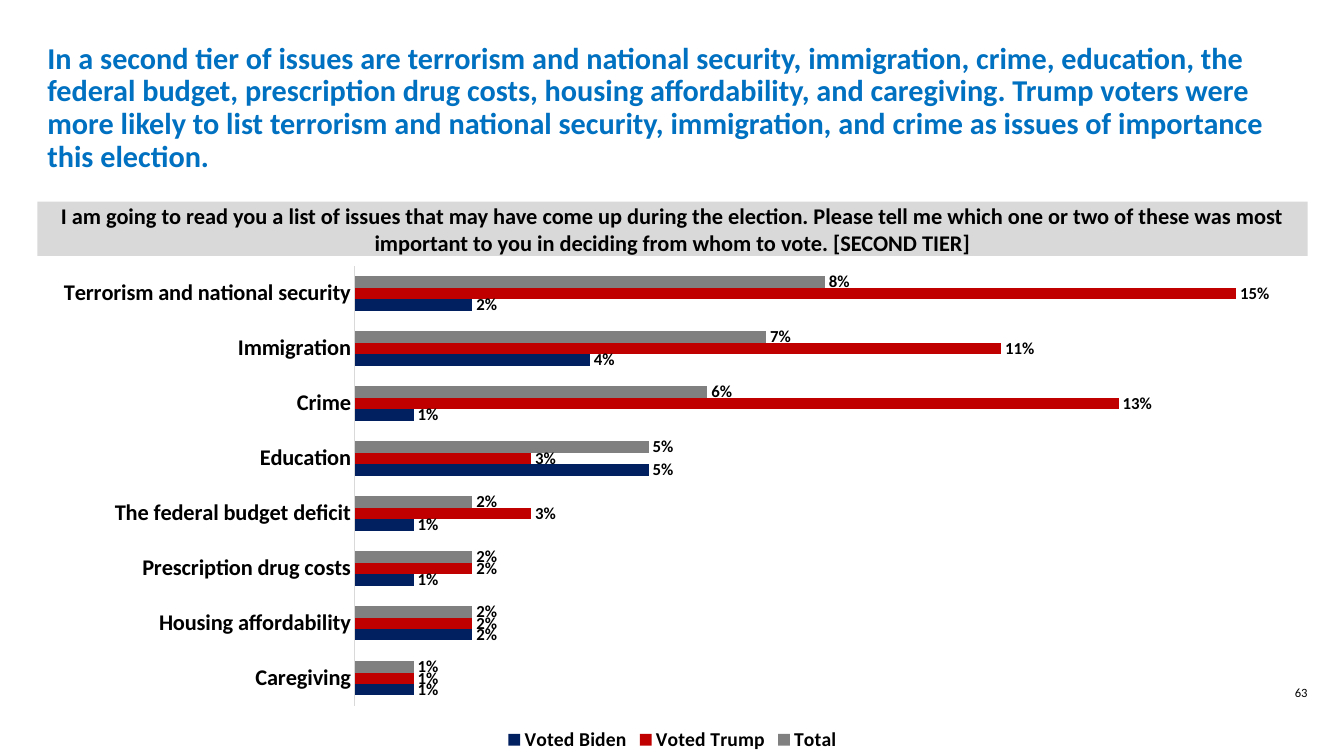
from dataclasses import dataclass

from lxml import etree
from pptx import Presentation
from pptx.chart.data import CategoryChartData
from pptx.dml.color import RGBColor
from pptx.enum.chart import XL_CHART_TYPE, XL_LABEL_POSITION, XL_LEGEND_POSITION, XL_TICK_MARK
from pptx.enum.shapes import MSO_SHAPE
from pptx.enum.text import MSO_ANCHOR, MSO_AUTO_SIZE, PP_ALIGN
from pptx.oxml.ns import qn
from pptx.util import Inches, Pt

BAR = XL_CHART_TYPE.BAR_CLUSTERED
OUTSIDE = XL_LABEL_POSITION.OUTSIDE_END
BOTTOM = XL_LEGEND_POSITION.BOTTOM
NO_TICK = XL_TICK_MARK.NONE
RECT = MSO_SHAPE.RECTANGLE
MIDDLE = MSO_ANCHOR.MIDDLE
NO_FIT = MSO_AUTO_SIZE.NONE
LEFT, CENTER = PP_ALIGN.LEFT, PP_ALIGN.CENTER


@dataclass(frozen=True)
class Theme:
    font: str = "Calibri"
    ink: str = "000000"
    blue: str = "0070C0"
    band: str = "D9D9D9"
    gray: str = "808080"
    red: str = "C00000"
    navy: str = "002060"
    title: float = 21.6
    body: float = 16
    legend: float = 14
    label: float = 12
    base: float = 10
    page: float = 9


THEME = Theme()

TITLE = (
    "In a second tier of issues are terrorism and national security, immigration, crime, "
    "education, the federal budget, prescription drug costs, housing affordability, and "
    "caregiving. Trump voters were more likely to list terrorism and national security, "
    "immigration, and crime as issues of importance this election."
)
QUESTION = (
    "I am going to read you a list of issues that may have come up during the election. "
    "Please tell me which one or two of these was most important to you in deciding from "
    "whom to vote. [SECOND TIER]"
)
ISSUES = [
    "Terrorism and national security", "Immigration", "Crime", "Education",
    "The federal budget deficit", "Prescription drug costs",
    "Housing affordability", "Caregiving",
]
VOTERS = [
    ("Total", THEME.gray, [0.08, 0.07, 0.06, 0.05, 0.02, 0.02, 0.02, 0.01]),
    ("Voted Trump", THEME.red, [0.15, 0.11, 0.13, 0.03, 0.03, 0.02, 0.02, 0.01]),
    ("Voted Biden", THEME.navy, [0.02, 0.04, 0.01, 0.05, 0.01, 0.01, 0.02, 0.01]),
]
PERCENT = "###0%"
PLOT = {"x": 0.25, "y": 0.02, "w": 0.74, "h": 0.88}


def set_font(font, size, color=THEME.ink, bold=True):
    font.name = THEME.font
    font.size = Pt(size)
    font.bold = bold
    font.color.rgb = RGBColor.from_string(color)


def write(shape, text, size, color=THEME.ink, bold=True, align=CENTER, anchor=MIDDLE, leading=1.0):
    frame = shape.text_frame
    frame.word_wrap = True
    frame.auto_size = NO_FIT
    frame.vertical_anchor = anchor
    para = frame.paragraphs[0]
    para.alignment = align
    para.line_spacing = leading
    run = para.add_run()
    run.text = text
    set_font(run.font, size, color, bold)


def add_title(slide, box):
    title = slide.shapes.title
    title.left, title.top, title.width, title.height = box
    write(title, TITLE, THEME.title, THEME.blue, align=LEFT, leading=0.9)


def add_band(slide, box):
    band = slide.shapes.add_shape(RECT, *box)
    band.shadow.inherit = False
    band.fill.solid()
    band.fill.fore_color.rgb = RGBColor.from_string(THEME.band)
    band.line.fill.background()
    write(band, QUESTION, THEME.body)


def place_plot(chart):
    """Fix the inner plot area as fractions of the chart."""
    area = chart._chartSpace.chart.plotArea
    for old in area.findall(qn("c:layout")):
        area.remove(old)
    layout = etree.Element(qn("c:layout"))
    area.insert(0, layout)
    manual = etree.SubElement(layout, qn("c:manualLayout"))
    rules = [("layoutTarget", "inner"), ("xMode", "edge"), ("yMode", "edge"), *PLOT.items()]
    for tag, value in rules:
        etree.SubElement(manual, qn(f"c:{tag}")).set("val", str(value))


def style_axes(chart):
    issues = chart.category_axis
    issues.reverse_order = True
    issues.major_tick_mark = NO_TICK
    issues.format.line.color.rgb = RGBColor.from_string(THEME.band)
    issues.format.line.width = Pt(0.75)
    set_font(issues.tick_labels.font, THEME.body)
    share = chart.value_axis
    share.minimum_scale, share.maximum_scale = 0, 0.16
    share.has_major_gridlines = False
    share.visible = False


def style_bars(plot):
    plot.gap_width = 182
    plot.overlap = 0
    plot.vary_by_categories = False
    for series, (_, color, _) in zip(plot.series, VOTERS):
        series.format.fill.solid()
        series.format.fill.fore_color.rgb = RGBColor.from_string(color)
        labels = series.data_labels
        labels.show_value = True
        labels.position = OUTSIDE
        labels.number_format = PERCENT
        labels.number_format_is_linked = False
        set_font(labels.font, THEME.label)


def add_bars(slide, box):
    data = CategoryChartData(number_format=PERCENT)
    data.categories = ISSUES
    for name, _, shares in VOTERS:
        data.add_series(name, shares)
    chart = slide.shapes.add_chart(BAR, *box, data).chart
    chart.has_title = False
    set_font(chart.font, THEME.base, bold=False)
    chart.has_legend = True
    chart.legend.position = BOTTOM
    chart.legend.include_in_layout = False
    set_font(chart.legend.font, THEME.legend)
    style_axes(chart)
    style_bars(chart.plots[0])
    place_plot(chart)


def add_page(slide, box):
    page = slide.shapes.add_textbox(*box)
    write(page, "63", THEME.page, bold=False, anchor=MSO_ANCHOR.TOP)


def main():
    deck = Presentation()
    deck.slide_width, deck.slide_height = Inches(13.33), Inches(7.5)
    slide = deck.slides.add_slide(deck.slide_layouts.get_by_name("Title Only"))
    left, width = Inches(0.37), Inches(12.6)
    add_page(slide, (Inches(12.53), Inches(6.75), Inches(0.75), Inches(0.33)))
    add_title(slide, (left, Inches(0.35), width, Inches(1.45)))
    add_band(slide, (left, Inches(2), width, Inches(0.54)))
    add_bars(slide, (left, Inches(2.54), width, Inches(4.96)))
    deck.save("out.pptx")


if __name__ == "__main__":
    main()
